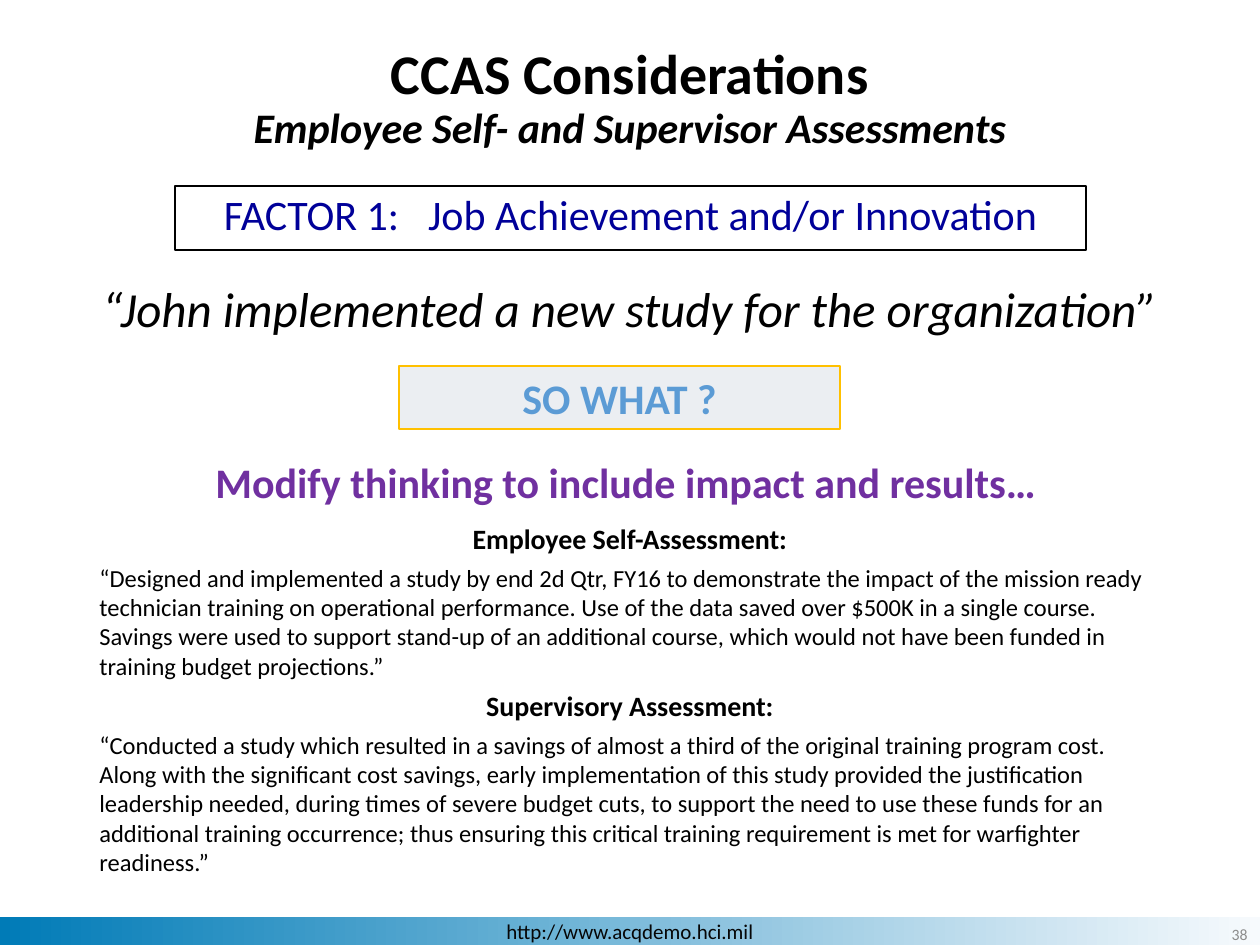
import pptx
import pptx.dml.color
import pptx.enum.shapes
import pptx.enum.text
import pptx.util

EMU_PER_PIXEL = 914400 / 126
FONT = "Calibri"
ALIGN = pptx.enum.text.PP_ALIGN
ANCHOR = pptx.enum.text.MSO_ANCHOR


def px(length):
    return pptx.util.Emu(round(length * EMU_PER_PIXEL))


def color(hex_string):
    return pptx.dml.color.RGBColor.from_string(hex_string)


def place(shape, left, top, width, height):
    shape.left, shape.top = px(left), px(top)
    shape.width, shape.height = px(width), px(height)


def set_frame(shape, anchor=ANCHOR.TOP, wrap=True):
    frame = shape.text_frame
    frame.auto_size = pptx.enum.text.MSO_AUTO_SIZE.NONE
    frame.word_wrap = wrap
    frame.vertical_anchor = anchor
    return frame


def write(paragraph, text, size, hex_color="000000", bold=False, italic=False,
          align=ALIGN.LEFT, after=0, line_spacing=1.0, tracking=None):
    """Append a formatted run; tracking is extra letter spacing in points."""
    paragraph.alignment = align
    paragraph.space_after = pptx.util.Pt(after)
    paragraph.line_spacing = line_spacing
    run = paragraph.add_run()
    run.text = text
    font = run.font
    font.name, font.size = FONT, pptx.util.Pt(size)
    font.bold, font.italic = bold, italic
    font.color.rgb = color(hex_color)
    if tracking is not None:
        run._r.get_or_add_rPr().set("spc", str(tracking * 100))


def add_rectangle(slide, bounds, fill=None, line=None):
    shape = slide.shapes.add_shape(
        pptx.enum.shapes.MSO_SHAPE.RECTANGLE, *map(px, bounds))
    shape.shadow.inherit = False
    if fill:
        shape.fill.solid()
        shape.fill.fore_color.rgb = color(fill)
    else:
        shape.fill.background()
    if line:
        shape.line.color.rgb = color(line)
        shape.line.width = pptx.util.Pt(0.75)
    else:
        shape.line.fill.background()
    return shape


def add_text(slide, bounds, text, size, anchor=ANCHOR.TOP, wrap=True, **style):
    box = slide.shapes.add_textbox(*map(px, bounds))
    write(set_frame(box, anchor, wrap).paragraphs[0], text, size, **style)
    return box


def add_assessment(slide, bounds, heading, statement):
    box = add_text(slide, bounds, heading, 16, bold=True, align=ALIGN.CENTER, after=4.5)
    write(box.text_frame.add_paragraph(), statement, 14)


def add_footer(slide):
    bar = add_rectangle(slide, (0, 917, 1260, 28))
    bar.fill.gradient()
    bar.fill.gradient_angle = 180
    for stop, hex_color in zip(bar.fill.gradient_stops, ("F7FAFD", "007BB7")):
        stop.color.rgb = color(hex_color)
    write(set_frame(bar, ANCHOR.MIDDLE).paragraphs[0], "http://www.acqdemo.hci.mil",
          12, "060606", align=ALIGN.CENTER)
    add_text(slide, (1047, 924, 213, 21), "38", 9, anchor=ANCHOR.MIDDLE,
             hex_color="8C8C8C", align=ALIGN.RIGHT)


def set_title(slide):
    title = slide.shapes.title
    place(title, 0, 40, 1260, 116)
    frame = set_frame(title)
    style = {"bold": True, "align": ALIGN.CENTER, "line_spacing": 0.9}
    write(frame.paragraphs[0], "CCAS Considerations", 32, **style)
    write(frame.add_paragraph(), "Employee Self- and Supervisor Assessments", 24,
          italic=True, **style)


def add_factor(slide):
    box = add_rectangle(slide, (175, 186, 911, 64), line="000000")
    frame = set_frame(box, ANCHOR.MIDDLE)
    frame.margin_left = frame.margin_top = frame.margin_right = 0
    frame.margin_bottom = px(9)
    for text, tracking in (("FACTOR 1:", None), (" ", 11),
                           ("Job Achievement and/or Innovation", None)):
        write(frame.paragraphs[0], text, 24, "000099", align=ALIGN.CENTER,
              tracking=tracking)


def add_question(slide):
    box = add_rectangle(slide, (399, 366, 441, 63), fill="EBEEF2", line="FFC000")
    write(set_frame(box).paragraphs[0], "SO WHAT ?", 24, "5B9BD5", bold=True,
          align=ALIGN.CENTER)


def main():
    presentation = pptx.Presentation()
    presentation.slide_width, presentation.slide_height = px(1260), px(945)
    slide = presentation.slides.add_slide(presentation.slide_layouts[5])

    add_footer(slide)
    set_title(slide)
    add_factor(slide)
    add_text(slide, (84, 272, 1091, 72),
             "“John implemented a new study for the organization”", 28,
             wrap=False, italic=True, align=ALIGN.CENTER)
    add_question(slide)
    add_text(slide, (203, 450, 854, 63),
             "Modify thinking to include impact and results…", 24,
             wrap=False, hex_color="7030A0", bold=True)
    add_assessment(
        slide, (87, 515, 1086, 174), "Employee Self-Assessment:",
        "“Designed and implemented a study by end 2d Qtr, FY16 to demonstrate the "
        "impact of the mission ready technician training on operational performance. "
        "Use of the data saved over $500K in a single course. Savings were used to "
        "support stand-up of an additional course, which would not have been funded "
        "in training budget projections.”")
    add_assessment(
        slide, (87, 682, 1086, 199), "Supervisory Assessment:",
        "“Conducted a study which resulted in a savings of almost a third of the "
        "original training program cost. Along with the significant cost savings, "
        "early implementation of this study provided the justification leadership "
        "needed, during times of severe budget cuts, to support the need to use these "
        "funds for an additional training occurrence; thus ensuring this critical "
        "training requirement is met for warfighter readiness.”")

    presentation.save("out.pptx")


if __name__ == "__main__":
    main()
